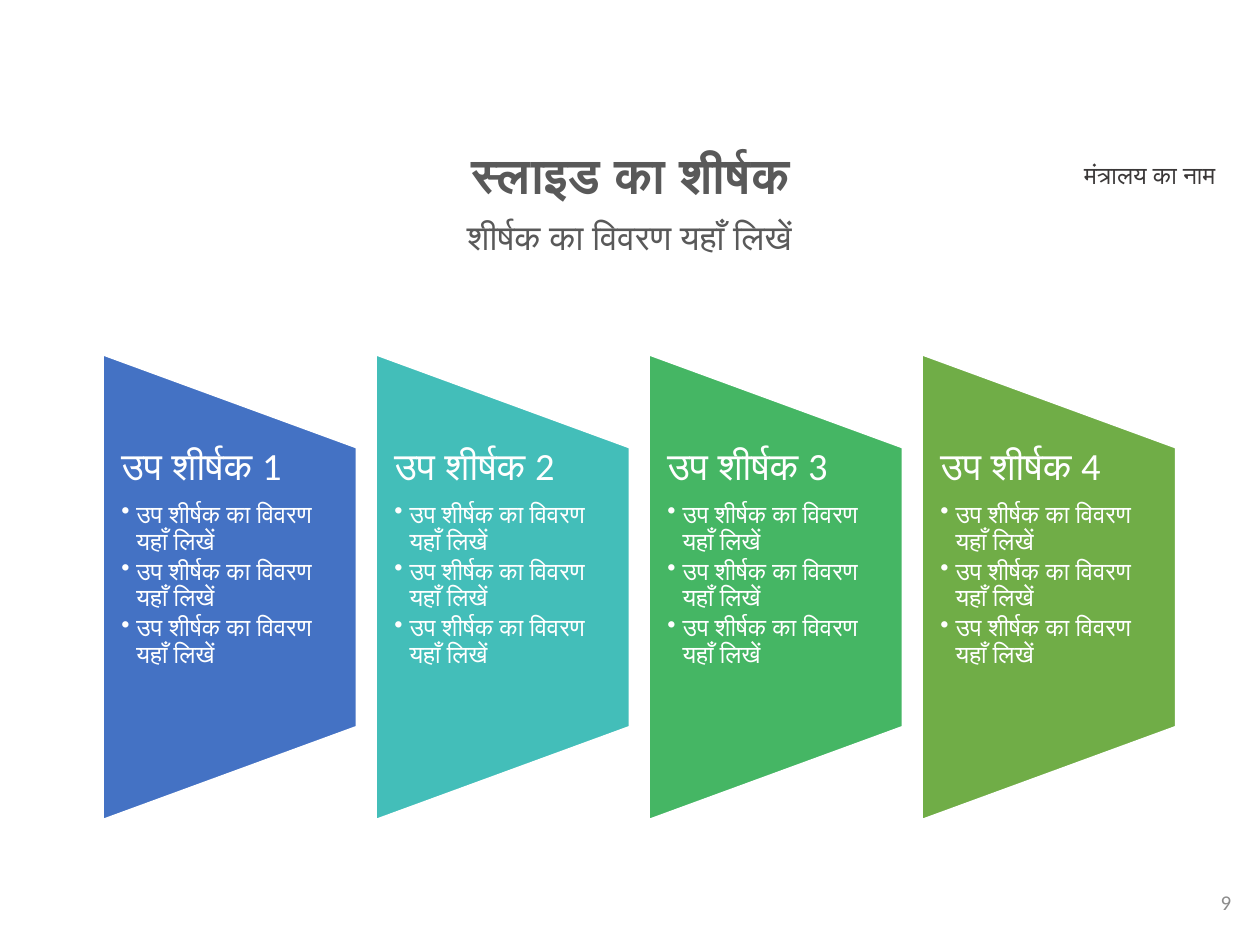
from lxml import etree
from pptx import Presentation
from pptx import util as u
from pptx.dml.color import RGBColor
from pptx.enum import shapes, text
from pptx.oxml import ns

WHITE = RGBColor(0xFF, 0xFF, 0xFF)
HEADING_GRAY = RGBColor(0x59, 0x59, 0x59)
MINISTRY_GRAY = RGBColor(0x3B, 0x38, 0x38)
NUMBER_GRAY = RGBColor(0x8C, 0x8C, 0x8C)
PANEL_COLORS = [
    RGBColor(0x44, 0x72, 0xC4),
    RGBColor(0x43, 0xBE, 0xB9),
    RGBColor(0x45, 0xB6, 0x64),
    RGBColor(0x70, 0xAD, 0x47),
]
DETAIL = "उप शीर्षक का विवरण यहाँ लिखें"

presentation = Presentation()
presentation.slide_width = u.Inches(10)
presentation.slide_height = u.Inches(7.5)
slide = presentation.slides.add_slide(presentation.slide_layouts[0])

# The slide is a grid of 100 columns by 75 rows.
COLUMN = presentation.slide_width / 100
ROW = presentation.slide_height / 75


def grid_box(left, top, width, height):
    """Turn columns and rows into slide lengths."""
    return [round(n) for n in (left * COLUMN, top * ROW, width * COLUMN, height * ROW)]


def format_text(paragraph, size, color, alignment, bold=False, spacing=1.0):
    paragraph.alignment = alignment
    paragraph.line_spacing = spacing
    paragraph.space_before = u.Pt(0)
    for run in paragraph.runs:
        run.font.name = "Calibri"
        run.font.size = u.Pt(size)
        run.font.bold = bold
        run.font.color.rgb = color


title, subtitle = slide.placeholders
headings = [
    (title, "स्लाइड का शीर्षक", (18.6, 11.5, 62.9, 4.7), 28, True),
    (subtitle, "शीर्षक का विवरण यहाँ लिखें", (14.6, 17, 70.7, 6.3), 20, False),
]
for shape, words, box, size, bold in headings:
    shape.left, shape.top, shape.width, shape.height = grid_box(*box)
    frame = shape.text_frame
    frame.text = words
    frame.vertical_anchor = text.MSO_ANCHOR.TOP
    frame.auto_size = text.MSO_AUTO_SIZE.NONE
    format_text(frame.paragraphs[0], size, HEADING_GRAY, text.PP_ALIGN.CENTER, bold, 0.9)

labels = [
    ("मंत्रालय का नाम", (83.1, 12.2, 16.3, 3.4), 14, MINISTRY_GRAY,
     text.PP_ALIGN.CENTER, text.MSO_ANCHOR.TOP),
    ("9", (76.2, 69.6, 22.5, 4), 12, NUMBER_GRAY,
     text.PP_ALIGN.RIGHT, text.MSO_ANCHOR.MIDDLE),
]
for words, box, size, color, alignment, anchor in labels:
    frame = slide.shapes.add_textbox(*grid_box(*box)).text_frame
    frame.word_wrap = True
    frame.vertical_anchor = anchor
    frame.text = words
    format_text(frame.paragraphs[0], size, color, alignment)

# Four trapezoids, each turned on its side, with upright text on top.
PANEL_LEFT, PANEL_PITCH, PANEL_WIDTH = 8.13, 21.67, 20.2
PANEL_HEIGHT, PANEL_MIDDLE = 37, 46.6
TEXT_HEIGHT = 22.2

for index, color in enumerate(PANEL_COLORS):
    left = PANEL_LEFT + index * PANEL_PITCH
    center = left + PANEL_WIDTH / 2
    panel = slide.shapes.add_shape(
        shapes.MSO_SHAPE.FLOWCHART_MANUAL_OPERATION,
        *grid_box(center - PANEL_HEIGHT / 2, PANEL_MIDDLE - PANEL_WIDTH / 2,
                  PANEL_HEIGHT, PANEL_WIDTH))
    panel.rotation = 270
    panel.shadow.inherit = False
    panel.fill.solid()
    panel.fill.fore_color.rgb = color
    panel.line.color.rgb = WHITE
    panel.line.width = u.Pt(1.5)

    frame = slide.shapes.add_textbox(
        *grid_box(left, PANEL_MIDDLE - TEXT_HEIGHT / 2, PANEL_WIDTH, TEXT_HEIGHT)).text_frame
    frame.word_wrap = True
    frame.margin_left = frame.margin_right = u.Inches(0.15)
    frame.margin_top = frame.margin_bottom = 0
    frame.text = "\n".join([f"उप शीर्षक {index + 1}"] + [DETAIL] * 3)
    heading, *details = frame.paragraphs
    format_text(heading, 22, WHITE, text.PP_ALIGN.LEFT, spacing=0.9)
    heading.space_after = u.Pt(7.7)
    for paragraph in details:
        paragraph.level = 1
        format_text(paragraph, 14, WHITE, text.PP_ALIGN.LEFT, spacing=0.9)
        paragraph.space_after = u.Pt(2.1)
        properties = paragraph._p.get_or_add_pPr()
        properties.set("marL", str(u.Inches(0.12)))
        properties.set("indent", str(-u.Inches(0.12)))
        etree.SubElement(properties, ns.qn("a:buChar"), char="•")

presentation.save("out.pptx")
